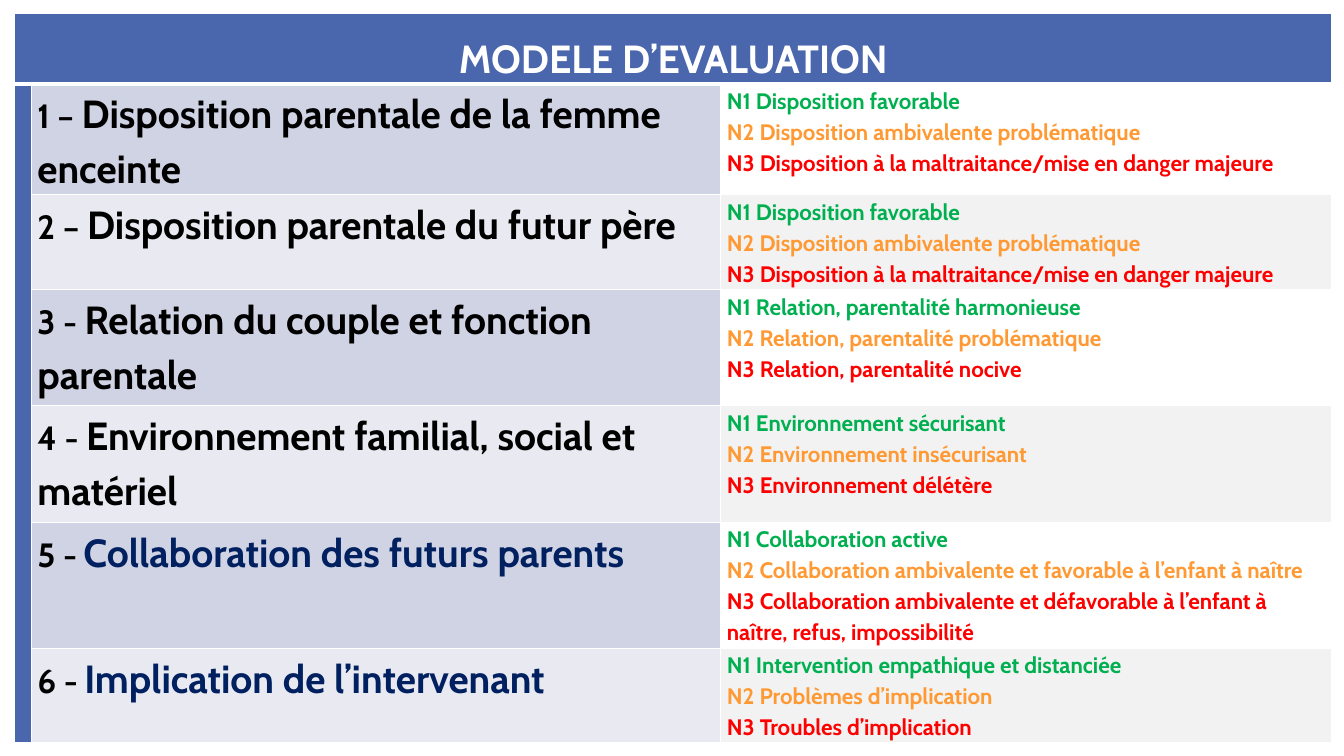
from pptx import Presentation
from pptx.dml.color import RGBColor
from pptx.enum import text
from pptx.oxml import parse_xml
from pptx.oxml.ns import nsdecls
from pptx.util import Pt

BLUE, WHITE, BLACK, NAVY = "4A66AC", "FFFFFF", "000000", "002060"
LEVEL_COLOURS = ["00B050", "FF9933", "FF0000"]
TOPIC_FILLS = ["D0D3E3", "E9EAF1"]
LEVEL_FILLS = [WHITE, "F2F2F2"]
COLUMN_WIDTHS = [10, 492.5, 436.5]
ROW_HEIGHTS = [50.5, 79, 68, 83, 83, 90, 67.5]

# Dash, size of the space after it, topic, topic colour, levels
DISPOSITIONS = [
    "Disposition favorable",
    "Disposition ambivalente problématique",
    "Disposition à la maltraitance/mise en danger majeure",
]
TOPICS = [
    ("–", 24, "Disposition parentale de la femme enceinte", BLACK, DISPOSITIONS),
    ("–", 24, "Disposition parentale du futur père", BLACK, DISPOSITIONS),
    ("-", 24, "Relation du couple et fonction parentale", BLACK, [
        "Relation, parentalité harmonieuse",
        "Relation, parentalité problématique",
        "Relation, parentalité nocive"]),
    ("-", 24, "Environnement familial, social et matériel", BLACK, [
        "Environnement sécurisant",
        "Environnement insécurisant",
        "Environnement délétère"]),
    ("-", 20, "Collaboration des futurs parents", NAVY, [
        "Collaboration active",
        "Collaboration ambivalente et favorable à l’enfant à naître",
        "Collaboration ambivalente et défavorable à l’enfant à naître, "
        "refus, impossibilité"]),
    ("-", 20, "Implication de l’intervenant", NAVY, [
        "Intervention empathique et distanciée",
        "Problèmes d’implication",
        "Troubles d’implication"]),
]


def colour(value):
    return RGBColor.from_string(value)


class SlideBuilder:
    font_name = "Cabin"
    line_spacing = 1.15

    def __init__(self, slide):
        self.slide = slide

    def table(self, left, top, widths, heights):
        frame = self.slide.shapes.add_table(
            len(heights), len(widths), Pt(left), Pt(top),
            Pt(sum(widths)), Pt(sum(heights)))
        table = frame.table
        for column, width in zip(table.columns, widths):
            column.width = Pt(width)
        for row, height in zip(table.rows, heights):
            row.height = Pt(height)
        return table

    def cell(self, cell, fill, bottom_border=1, top_border=1):
        """Set the margins, white borders and fill of a cell."""
        cell.margin_left = cell.margin_right = Pt(4.5)
        cell.margin_top = cell.margin_bottom = 0
        properties = cell._tc.get_or_add_tcPr()
        borders = {"L": 1, "R": 1, "T": top_border, "B": bottom_border}
        for side, width in borders.items():
            properties.append(parse_xml(
                f'<a:ln{side} {nsdecls("a")} w="{Pt(width)}"><a:solidFill>'
                f'<a:srgbClr val="{WHITE}"/></a:solidFill></a:ln{side}>'))
        cell.fill.solid()
        cell.fill.fore_color.rgb = colour(fill)

    def paragraph(self, paragraph, runs, alignment=text.PP_ALIGN.LEFT):
        """Fill a paragraph with (text, size, colour) runs."""
        paragraph.alignment = alignment
        paragraph.line_spacing = self.line_spacing
        paragraph.font.name = self.font_name
        paragraph.font.bold = True
        for words, size, value in runs:
            run = paragraph.add_run()
            run.text = words
            run.font.size = Pt(size)
            run.font.color.rgb = colour(value)


def main():
    presentation = Presentation()
    presentation.slide_width, presentation.slide_height = Pt(960), Pt(540)
    slide = presentation.slides.add_slide(presentation.slide_layouts[6])
    builder = SlideBuilder(slide)
    table = builder.table(10.5, 9.5, COLUMN_WIDTHS, ROW_HEIGHTS)

    # Heading across the table
    for cell in table.rows[0].cells:
        builder.cell(cell, BLUE, bottom_border=3)
    heading = table.cell(0, 0)
    heading.merge(table.cell(0, 2))
    heading.margin_top = Pt(11)
    builder.paragraph(heading.text_frame.paragraphs[0],
                      [("MODELE D’EVALUATION", 28, WHITE)],
                      text.PP_ALIGN.CENTER)

    # One row per topic, in alternating shades
    for number, (dash, gap, topic, value, levels) in enumerate(TOPICS, 1):
        shade = (number - 1) % 2
        fills = [BLUE, TOPIC_FILLS[shade], LEVEL_FILLS[shade]]
        cells = [table.cell(number, column) for column in range(3)]
        for cell, fill in zip(cells, fills):
            builder.cell(cell, fill, top_border=3 if number == 1 else 1)

        builder.paragraph(cells[1].text_frame.paragraphs[0], [
            (f"{number} {dash}", 24, BLACK),
            (" ", gap, BLACK),
            (topic, 28, value)])

        frame = cells[2].text_frame
        for level, (words, shown) in enumerate(zip(levels, LEVEL_COLOURS), 1):
            paragraph = (frame.paragraphs[0] if level == 1
                         else frame.add_paragraph())
            builder.paragraph(paragraph, [(f"N{level} {words}", 16, shown)])

    # Blue band on the left
    table.cell(1, 0).merge(table.cell(len(TOPICS), 0))

    presentation.save("out.pptx")


if __name__ == "__main__":
    main()
